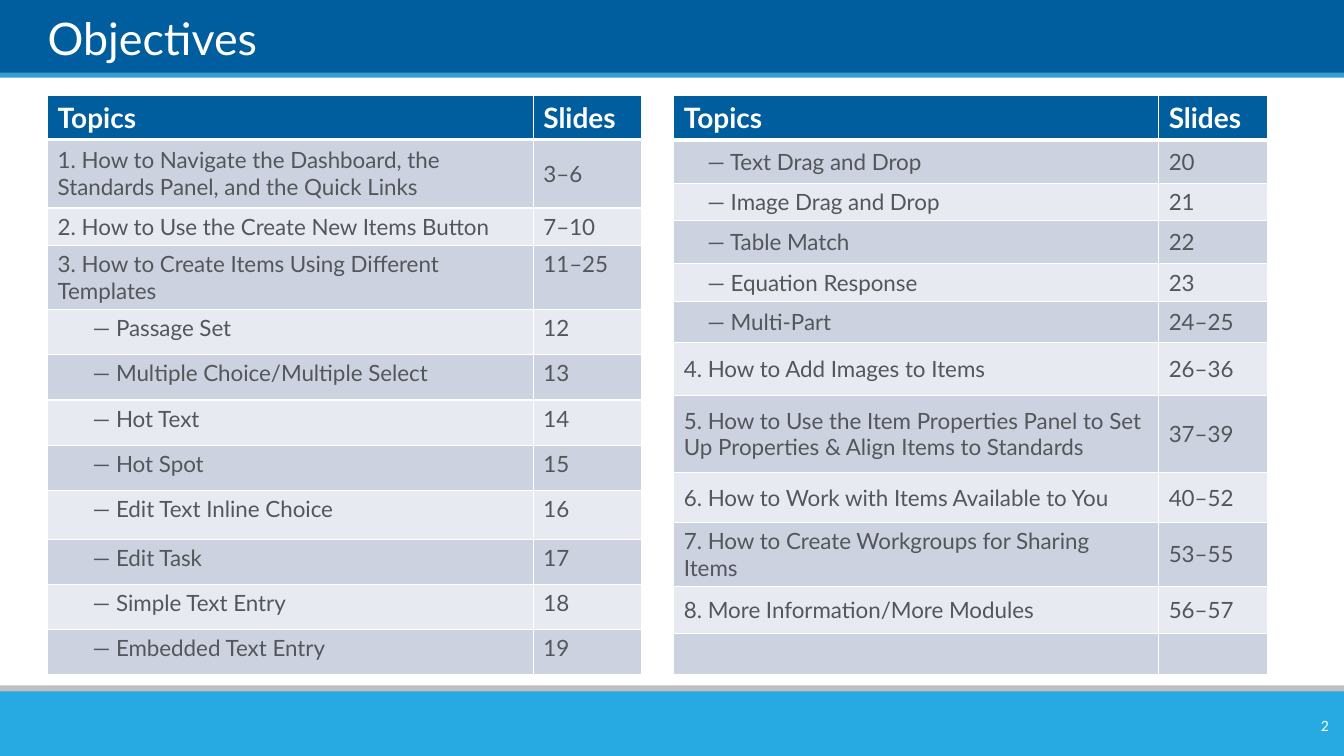
from dataclasses import dataclass

from lxml.etree import SubElement
from pptx import Presentation
from pptx.dml.color import RGBColor
from pptx.enum.shapes import MSO_SHAPE
from pptx.enum.text import MSO_ANCHOR as Anchor, PP_ALIGN as Align
from pptx.oxml.ns import qn
from pptx.util import Cm, Pt


@dataclass(frozen=True)
class Theme:
    font: str = "Lato"
    navy: str = "005E9E"
    sky: str = "35A0CE"
    grey: str = "BFBFBF"
    cyan: str = "27AAE1"
    white: str = "FFFFFF"
    text: str = "53565A"
    odd_row: str = "CCD2DF"
    even_row: str = "E7EAF0"
    title_size: int = 32
    header_size: int = 20
    body_size: int = 16
    number_size: int = 10


@dataclass(frozen=True)
class Band:
    top: float
    height: float
    color: str


@dataclass(frozen=True)
class Label:
    text: str
    left: float
    top: float
    width: float
    height: float
    size: int
    anchor: Anchor
    align: Align = Align.LEFT
    inset: float = 0


@dataclass(frozen=True)
class Topic:
    name: str
    slides: str
    height: float
    anchor: Anchor = Anchor.MIDDLE


@dataclass(frozen=True)
class TopicTable:
    left: float
    columns: tuple[float, float]
    indent: float  # left indent of the dashed subtopics
    header_height: float
    topics: list[Topic]


THEME = Theme()
SLIDE_WIDTH, SLIDE_HEIGHT = 33.87, 19.05
TABLE_TOP = 2.41
DASH = "—"
RULE, HEADER_RULE = 1, 3

BANDS = [
    Band(-0.03, 1.9, THEME.navy),
    Band(1.83, 0.13, THEME.sky),
    Band(17.27, 0.36, THEME.grey),
    Band(17.42, 1.63, THEME.cyan),
]

LABELS = [
    Label("Objectives", 1.2, 0.18, 31.57, 1.45, THEME.title_size, Anchor.BOTTOM),
    Label("2", 31.78, 17.91, 1.96, 0.76, THEME.number_size, Anchor.MIDDLE,
          Align.RIGHT, 0.25),
]

TABLES = [
    TopicTable(1.2, (12.24, 2.72), 0.88, 1.07, [
        Topic("1. How to Navigate the Dashboard, the Standards Panel, and the Quick Links",
              "3–6", 1.73),
        Topic("2. How to Use the Create New Items Button", "7–10", 0.95),
        Topic("3. How to Create Items Using Different Templates", "11–25", 1.27, Anchor.TOP),
        Topic("— Passage Set", "12", 1.14, Anchor.TOP),
        Topic("— Multiple Choice/Multiple Select", "13", 1.14, Anchor.TOP),
        Topic("— Hot Text", "14", 1.14, Anchor.TOP),
        Topic("— Hot Spot", "15", 1.14, Anchor.TOP),
        Topic("— Edit Text Inline Choice", "16", 1.23, Anchor.TOP),
        Topic("— Edit Task", "17", 1.14, Anchor.TOP),
        Topic("— Simple Text Entry", "18", 1.14, Anchor.TOP),
        Topic("— Embedded Text Entry", "19", 1.14, Anchor.TOP),
    ]),
    TopicTable(16.98, (12.22, 2.74), 0.59, 1.12, [
        Topic("— Text Drag and Drop", "20", 1.09),
        Topic("— Image Drag and Drop", "21", 0.94),
        Topic("— Table Match", "22", 1.07),
        Topic("— Equation Response", "23", 0.97),
        Topic("— Multi-Part", "24–25", 1.04),
        Topic("4. How to Add Images to Items", "26–36", 1.32),
        Topic("5. How to Use the Item Properties Panel to Set Up Properties "
              "& Align Items to Standards", "37–39", 1.95),
        Topic("6. How to Work with Items Available to You", "40–52", 1.25),
        Topic("7. How to Create Workgroups for Sharing Items", "53–55", 1.3),
        Topic("8. More Information/More Modules", "56–57", 1.19),
        Topic("", "", 1.04),
    ]),
]


def rgb(color: str) -> RGBColor:
    return RGBColor.from_string(color)


def style_font(p, size: int, color: str, bold: bool = False) -> None:
    for r in p.runs:
        r.font.name = THEME.font
        r.font.size = Pt(size)
        r.font.bold = bold
        r.font.color.rgb = rgb(color)


def add_band(slide, band: Band) -> None:
    sp = slide.shapes.add_shape(MSO_SHAPE.RECTANGLE, 0, Cm(band.top),
                                Cm(SLIDE_WIDTH), Cm(band.height))
    sp.shadow.inherit = False
    sp.fill.solid()
    sp.fill.fore_color.rgb = rgb(band.color)
    sp.line.fill.background()


def add_label(slide, label: Label) -> None:
    sp = slide.shapes.add_textbox(Cm(label.left), Cm(label.top),
                                  Cm(label.width), Cm(label.height))
    tf = sp.text_frame
    tf.word_wrap = True
    tf.vertical_anchor = label.anchor
    tf.margin_left = tf.margin_right = Cm(label.inset)
    tf.margin_top = tf.margin_bottom = 0
    tf.text = label.text
    p = tf.paragraphs[0]
    p.alignment = label.align
    style_font(p, label.size, THEME.white)


def set_borders(cell, top: int, bottom: int) -> None:
    tc_pr = cell._tc.get_or_add_tcPr()
    for side, width in (("L", RULE), ("R", RULE), ("T", top), ("B", bottom)):
        ln = SubElement(tc_pr, qn(f"a:ln{side}"), w=str(Pt(width)))
        fill = SubElement(ln, qn("a:solidFill"))
        SubElement(fill, qn("a:srgbClr"), val=THEME.white)


def add_topic_table(slide, spec: TopicTable) -> None:
    rows = [Topic("Topics", "Slides", spec.header_height, Anchor.TOP), *spec.topics]
    frame = slide.shapes.add_table(
        len(rows), len(spec.columns), Cm(spec.left), Cm(TABLE_TOP),
        Cm(sum(spec.columns)), Cm(sum(row.height for row in rows)))
    table = frame.table
    for column, width in zip(table.columns, spec.columns):
        column.width = Cm(width)

    for i, row in enumerate(rows):
        table.rows[i].height = Cm(row.height)
        is_header = i == 0
        if is_header:
            fill, size, color = THEME.navy, THEME.header_size, THEME.white
        else:
            fill = THEME.odd_row if i % 2 else THEME.even_row
            size, color = THEME.body_size, THEME.text
        for j, text in enumerate((row.name, row.slides)):
            cell = table.cell(i, j)
            set_borders(cell, HEADER_RULE if i == 1 else RULE,
                        HEADER_RULE if is_header else RULE)
            cell.fill.solid()
            cell.fill.fore_color.rgb = rgb(fill)
            cell.vertical_anchor = row.anchor
            cell.text = text
            p = cell.text_frame.paragraphs[0]
            if text.startswith(DASH):
                p._p.get_or_add_pPr().set("marL", str(Cm(spec.indent)))
            style_font(p, size, color, bold=is_header)


def main() -> None:
    prs = Presentation()
    prs.slide_width, prs.slide_height = Cm(SLIDE_WIDTH), Cm(SLIDE_HEIGHT)
    slide = prs.slides.add_slide(prs.slide_layouts[6])

    # Header and footer bands
    for band in BANDS:
        add_band(slide, band)

    # Title and slide number
    for label in LABELS:
        add_label(slide, label)

    # Topic tables
    for spec in TABLES:
        add_topic_table(slide, spec)

    prs.save("out.pptx")


if __name__ == "__main__":
    main()
